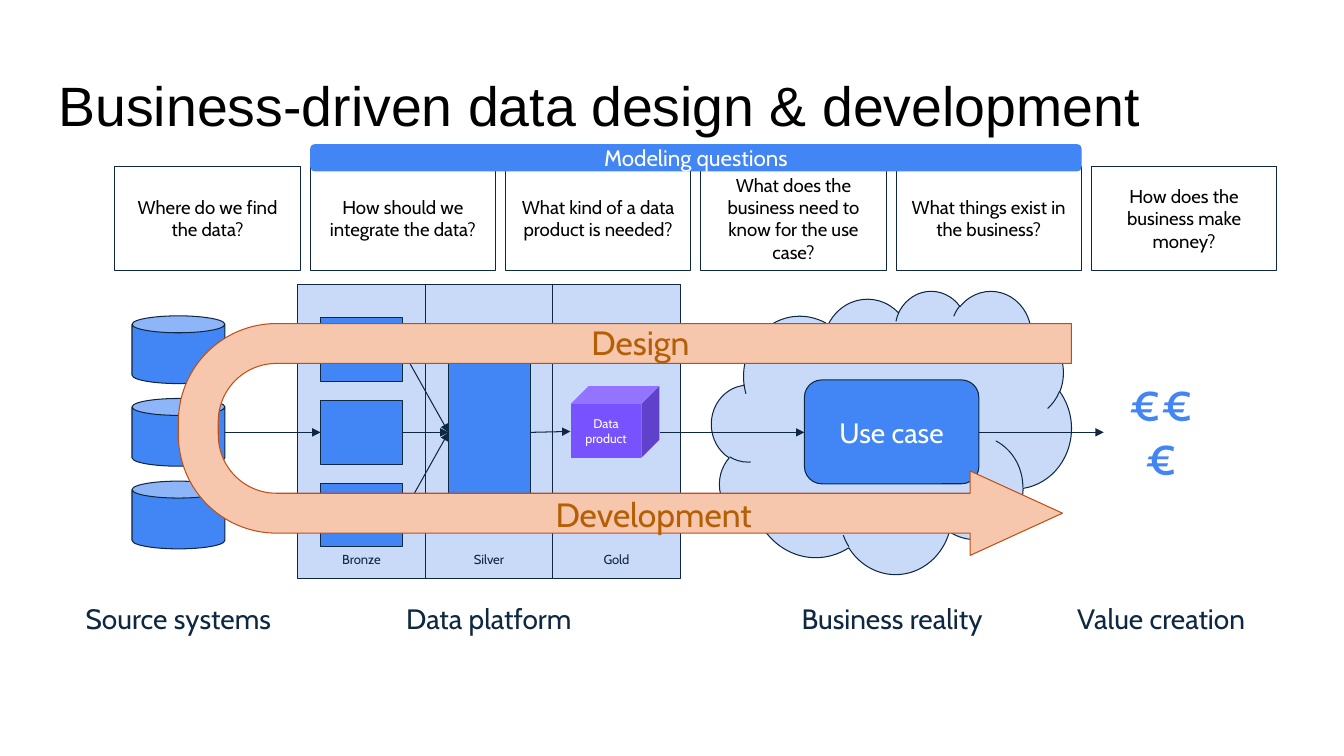
from pptx import Presentation
from pptx.dml.color import RGBColor
from pptx.enum.shapes import MSO_CONNECTOR, MSO_SHAPE
from pptx.enum.text import MSO_ANCHOR, PP_ALIGN
from pptx.oxml.ns import qn
from pptx.util import Pt
from lxml.etree import SubElement

HUES = {
    "navy": "0E2841", "blue": "4285F4", "pale": "C9DAF8", "violet": "7752FE",
    "peach": "F6C6AD", "rust": "C04F15", "brown": "B45F06",
    "white": "FFFFFF", "black": "000000",
}
TITLE = "Business-driven data design & development"
ASKS = [
    "Where do we find the data?",
    "How should we integrate the data?",
    "What kind of a data product is needed?",
    "What does the business need to know for the use case?",
    "What things exist in the business?",
    "How does the business make money?",
]
BANNER = "Modeling questions"
LANES = ["Bronze", "Silver", "Gold"]
STAGES = [
    ("Source systems", 43.9), ("Data platform", 265.7),
    ("Business reality", 553.7), ("Value creation", 745.9),
]
FLOWS = [("Design", 368.6, 220.3), ("Development", 378, 343.4)]
PAD = 9.35
ROWS = [249.8 + 59.04 * i for i in range(3)]
MID = ROWS[1]
CAN_X, CAN_W = 94.3, 66.4
TAB_X, TAB_W = 229, 58.3
HUB_X = 320.4
LANE_X, LANE_W = 212.6, 91.1
ASK_X, ASK_W, ASK_STEP = 82.1, 132.5, 139.5

prs = Presentation()
prs.slide_width, prs.slide_height = Pt(960), Pt(540)
slide = prs.slides.add_slide(prs.slide_layouts[6])
shapes = slide.shapes


def tint(hue):
    return RGBColor.from_string(HUES[hue])


def write(item, text, size, hue, font="Cabin", align=PP_ALIGN.CENTER,
          anchor=MSO_ANCHOR.MIDDLE, pad=PAD):
    frame = item.text_frame
    frame.text = text
    frame.word_wrap = True
    frame.vertical_anchor = anchor
    frame.margin_left = frame.margin_right = Pt(pad)
    frame.margin_top = frame.margin_bottom = Pt(pad)
    para = frame.paragraphs[0]
    para.alignment = align
    face = para.runs[0].font
    face.name, face.size = font, Pt(size)
    face.color.rgb = tint(hue)
    return para


def label(box, text, size, hue, **style):
    item = shapes.add_textbox(*map(Pt, box))
    style.setdefault("anchor", MSO_ANCHOR.TOP)
    return write(item, text, size, hue, **style)


def draw(kind, box, fill, line="navy", adj=()):
    item = shapes.add_shape(kind, *map(Pt, box))
    item.shadow.inherit = False
    item.fill.solid()
    item.fill.fore_color.rgb = tint(fill)
    if line:
        item.line.color.rgb = tint(line)
        item.line.width = Pt(0.75)
    else:
        item.line.fill.background()
    for i, value in enumerate(adj):
        item.adjustments[i] = value
    return item


def link(x1, y1, x2, y2):
    item = shapes.add_connector(MSO_CONNECTOR.STRAIGHT, *map(Pt, (x1, y1, x2, y2)))
    item.line.color.rgb = tint("navy")
    item.line.width = Pt(0.75)
    SubElement(item.line._get_or_add_ln(), qn("a:tailEnd"), type="triangle")
    SubElement(item._element.spPr, qn("a:effectLst"))


draw(MSO_SHAPE.CLOUD, (508.3, 207.4, 257, 202.3), "pale")
title = label((32.4, 46.8, 894.2, 60.5), TITLE, 39.6, "black",
              font="Arial", align=PP_ALIGN.LEFT)
title.line_spacing = 0.9

for y in ROWS:
    draw(MSO_SHAPE.CAN, (CAN_X, y - 24.2, CAN_W, 48.4), "blue", adj=[0.25])
for i in range(len(LANES)):
    draw(MSO_SHAPE.RECTANGLE, (LANE_X + LANE_W * i, 203, LANE_W, 210.2), "pale")

cube = draw(MSO_SHAPE.CUBE, (407.5, 275.8, 63.4, 51.1), "violet", None, [0.25])
write(cube, "Data product", 9, "white")
case = draw(MSO_SHAPE.ROUNDED_RECTANGLE, (574.6, 271.4, 124.6, 74.2), "blue", adj=[0.167])
write(case, "Use case", 20, "white")
label((788.4, 288, 82.1, 41), "€€€", 32, "blue", anchor=MSO_ANCHOR.MIDDLE)

draw(MSO_SHAPE.RECTANGLE, (HUB_X, 254.9, TAB_W, 108), "blue")
for y in ROWS:
    link(CAN_X + CAN_W, y, TAB_X, y)
    draw(MSO_SHAPE.RECTANGLE, (TAB_X, y - 22.7, TAB_W, 45.4), "blue")
    link(TAB_X + TAB_W, y, HUB_X, MID)
link(HUB_X + TAB_W, MID, 407.5, 308.2)
link(471.6, MID, 574.6, MID)
link(699.2, MID, 788.4, MID)

for i, name in enumerate(LANES):
    label((TAB_X + LANE_W * i, 388.1, TAB_W, 30.2), name, 9.3, "navy")
for name, x in STAGES:
    label((x, 420.5, 167, 51.1), name, 20, "navy")

turn = draw(MSO_SHAPE.U_TURN_ARROW, (363.6, -5, 165.6, 637.9), "peach", "rust",
            [0.172, 0.182, 0.398, 0.423, 0.99])
turn.rotation = 270
turn._element.spPr.get_or_add_xfrm().set("flipH", "1")
for name, x, y in FLOWS:
    label((x, y, 177.8, 48.2), name, 24, "brown")

for i, text in enumerate(ASKS):
    card = draw(MSO_SHAPE.RECTANGLE, (ASK_X + ASK_STEP * i, 118.8, ASK_W, 74.2), "white")
    write(card, text, 13.3, "black")
bar = draw(MSO_SHAPE.ROUNDED_RECTANGLE,
           (ASK_X + ASK_STEP, 103, ASK_STEP * 3 + ASK_W, 19.4), "blue", None)
write(bar, BANNER, 16, "white", pad=3.6)

prs.save("out.pptx")
